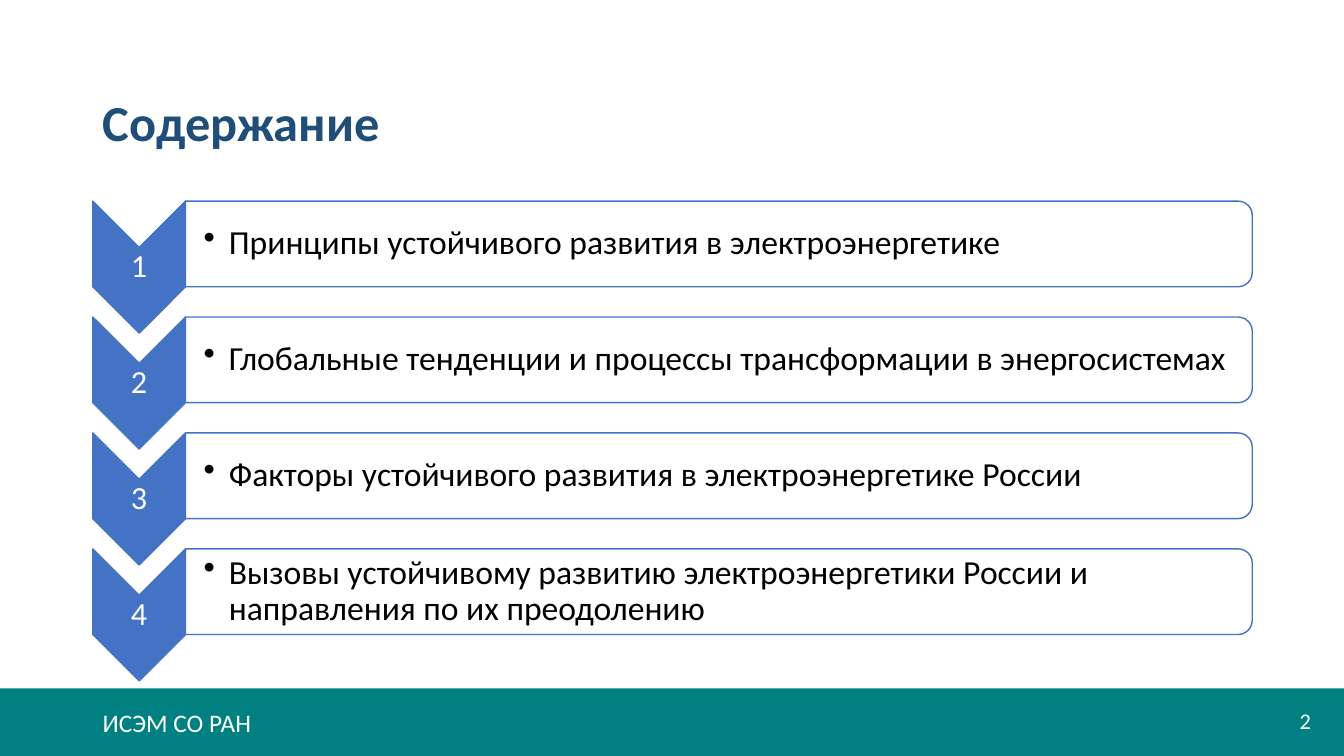
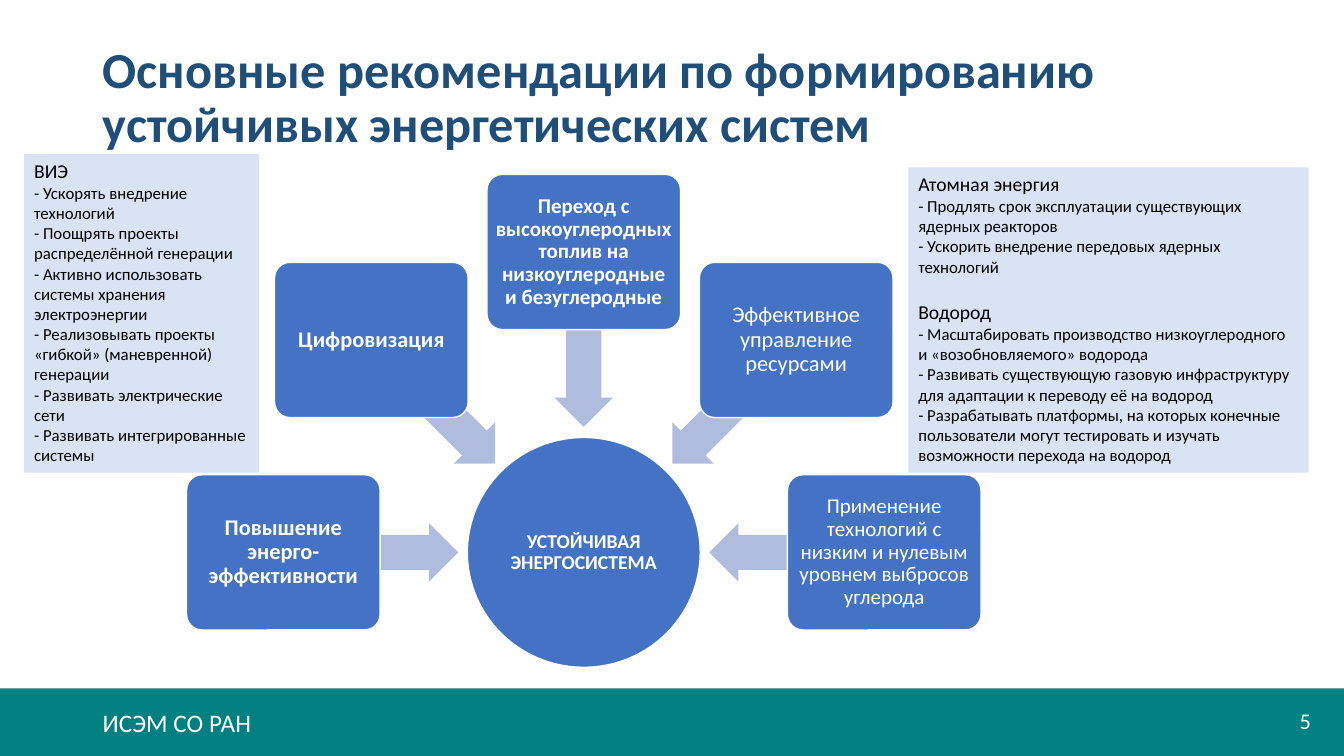
from itertools import count
from math import cos, radians, sin

from lxml.etree import SubElement
from pptx import Presentation
from pptx.dml.color import RGBColor
from pptx.enum.shapes import MSO_SHAPE
from pptx.enum.text import MSO_ANCHOR, PP_ALIGN
from pptx.oxml.ns import qn
from pptx.util import Inches, Pt

COLORS = {
    "band": "008080",
    "title": "1F4E79",
    "accent": "4472C4",
    "arrow": "B0BCDE",
    "panel": "DAE3F3",
    "white": "FFFFFF",
    "black": "000000",
}
FONT = "Calibri"

TOPICS = [
    "Принципы устойчивого развития в электроэнергетике",
    "Глобальные тенденции и процессы трансформации в энергосистемах",
    "Факторы устойчивого развития в электроэнергетике России",
    "Вызовы устойчивому развитию электроэнергетики России и направления по их преодолению",
]

MEASURES = [
    ("Повышение энерго-эффективности", 16, True),
    ("Цифровизация", 16, True),
    ("Переход с высокоуглеродных топлив на низкоуглеродные и безуглеродные", 15, True),
    ("Эффективное управление ресурсами", 16, False),
    ("Применение технологий с низким и нулевым уровнем выбросов углерода", 15, False),
]

NUCLEAR_AND_HYDROGEN = [
    ("Атомная энергия", [
        "Продлять срок эксплуатации существующих ядерных реакторов",
        "Ускорить внедрение передовых ядерных технологий",
    ]),
    ("Водород", [
        "Масштабировать производство низкоуглеродного и «возобновляемого» водорода",
        "Развивать существующую газовую инфраструктуру для адаптации к переводу её на водород",
        "Разрабатывать платформы, на которых конечные пользователи могут тестировать "
        "и изучать возможности перехода на водород",
    ]),
]

RENEWABLES = [
    ("ВИЭ", [
        "Ускорять внедрение технологий",
        "Поощрять проекты распределённой генерации",
        "Активно использовать системы хранения электроэнергии",
        "Реализовывать проекты «гибкой» (маневренной) генерации",
        "Развивать электрические сети",
        "Развивать интегрированные системы",
    ]),
]


def color(key):
    return RGBColor.from_string(COLORS[key])


def set_margins(frame, left, other):
    frame.margin_left = Inches(left)
    frame.margin_top = frame.margin_right = frame.margin_bottom = Inches(other)


def style_paragraph(paragraph, size, ink, bold=False, align=PP_ALIGN.LEFT, spacing=1.0):
    paragraph.alignment = align
    paragraph.line_spacing = spacing
    for run in paragraph.runs:
        run.font.name = FONT
        run.font.size = Pt(size)
        run.font.bold = bold
        run.font.color.rgb = color(ink)


def write(frame, text, size, ink, anchor=MSO_ANCHOR.MIDDLE, wrap=True, **style):
    frame.text = text
    frame.word_wrap = wrap
    frame.vertical_anchor = anchor
    style_paragraph(frame.paragraphs[0], size, ink, **style)


def add_label(slide, box, text, size, ink, **style):
    frame = slide.shapes.add_textbox(*map(Inches, box)).text_frame
    write(frame, text, size, ink, **style)
    return frame


def add_figure(slide, kind, box, fill, line=None, rotation=0, adjustments=()):
    figure = slide.shapes.add_shape(kind, *map(Inches, box))
    figure.shadow.inherit = False
    figure.rotation = rotation
    figure.fill.solid()
    figure.fill.fore_color.rgb = color(fill)
    if line:
        figure.line.color.rgb = color(line)
        figure.line.width = Pt(1)
    else:
        figure.line.fill.background()
    for index, value in enumerate(adjustments):
        figure.adjustments[index] = value
    return figure


def centered(x, y, width, height):
    return x - width / 2, y - height / 2, width, height


def add_bullet(paragraph, indent):
    properties = paragraph._p.get_or_add_pPr()
    properties.set("marL", str(Inches(indent)))
    properties.set("indent", str(-Inches(indent)))
    SubElement(properties, qn("a:buChar")).set("char", "•")


def add_base(deck, title, title_box, number):
    slide = deck.slides.add_slide(deck.slide_layouts[6])
    add_figure(slide, MSO_SHAPE.RECTANGLE, (0, 6.83, 13.33, 0.67), "band")
    add_label(slide, (0.92, 6.97, 1.69, 0.4), "ИСЭМ СО РАН", 18, "white",
              anchor=MSO_ANCHOR.TOP, wrap=False)
    add_label(slide, title_box, title, 36, "title", bold=True, spacing=0.9)
    add_label(slide, (11.54, 6.95, 1.56, 0.4), str(number), 16, "white",
              align=PP_ALIGN.RIGHT)
    return slide


def add_topic(slide, number, topic):
    center = 2.42 + 1.15 * (number - 1)
    add_figure(slide, MSO_SHAPE.CHEVRON, centered(1.38, center + 0.23, 1.31, 0.92),
               "accent", "accent", rotation=90)
    numeral = add_label(slide, centered(1.38, center + 0.23, 0.92, 0.39), str(number),
                        23, "white", align=PP_ALIGN.CENTER, spacing=0.9)
    set_margins(numeral, 0.02, 0.02)
    add_figure(slide, MSO_SHAPE.ROUND_2_SAME_RECTANGLE,
               centered(7.13, center, 0.85, 10.58), "white", "accent", rotation=90)
    caption = add_label(slide, centered(7.1, center, 10.54, 0.77), topic, 24, "black",
                        spacing=0.9)
    set_margins(caption, 0.19, 0.02)
    add_bullet(caption.paragraphs[0], 0.25)


def add_node(slide, kind, box, text, size, bold, margin, adjustments=()):
    node = add_figure(slide, kind, box, "accent", "white", adjustments=adjustments)
    set_margins(node.text_frame, margin, margin)
    write(node.text_frame, text, size, "white", bold=bold, align=PP_ALIGN.CENTER,
          spacing=0.9)


def add_wheel(slide, hub_x, hub_y):
    def on_ray(angle, radius, width, height):
        x = hub_x + radius * cos(radians(angle))
        y = hub_y - radius * sin(radians(angle))
        return centered(x, y, width, height)

    add_node(slide, MSO_SHAPE.OVAL, centered(hub_x, hub_y, 2.31, 2.28),
             "УСТОЙЧИВАЯ ЭНЕРГОСИСТЕМА", 14, True, 0.01)
    for angle, (measure, size, bold) in zip(count(180, -45), MEASURES):
        add_figure(slide, MSO_SHAPE.LEFT_ARROW, on_ray(angle, 2.11, 1.73, 0.58), "arrow",
                   rotation=(360 - angle) % 360, adjustments=(0.6, 0.5))
        add_node(slide, MSO_SHAPE.ROUNDED_RECTANGLE, on_ray(angle, 2.98, 1.92, 1.54),
                 measure, size, bold, 0.03, (0.1,))


def add_panel(slide, box, sections):
    frame = add_figure(slide, MSO_SHAPE.RECTANGLE, box, "panel").text_frame
    frame.word_wrap = True
    frame.vertical_anchor = MSO_ANCHOR.TOP
    for index, (heading, actions) in enumerate(sections):
        header = frame.add_paragraph() if index else frame.paragraphs[0]
        header.text = heading
        style_paragraph(header, 14, "black")
        if index:
            header.space_before = Pt(17)
        for action in actions:
            entry = frame.add_paragraph()
            entry.text = f"- {action}"
            style_paragraph(entry, 12, "black")


def main():
    deck = Presentation()
    deck.slide_width, deck.slide_height = Inches(13.33), Inches(7.5)

    contents = add_base(deck, "Содержание", (0.92, 0.69, 11.5, 1.11), 2)
    for number, topic in enumerate(TOPICS, 1):
        add_topic(contents, number, topic)

    advice = add_base(
        deck, "Основные рекомендации по формированию устойчивых энергетических систем",
        (0.92, 0.4, 11.5, 1.17), 5)
    add_wheel(advice, 5.79, 5.48)
    add_panel(advice, (9.01, 1.66, 3.97, 3.03), NUCLEAR_AND_HYDROGEN)
    add_panel(advice, (0.24, 1.53, 2.33, 3.16), RENEWABLES)

    deck.save("out.pptx")


if __name__ == "__main__":
    main()
